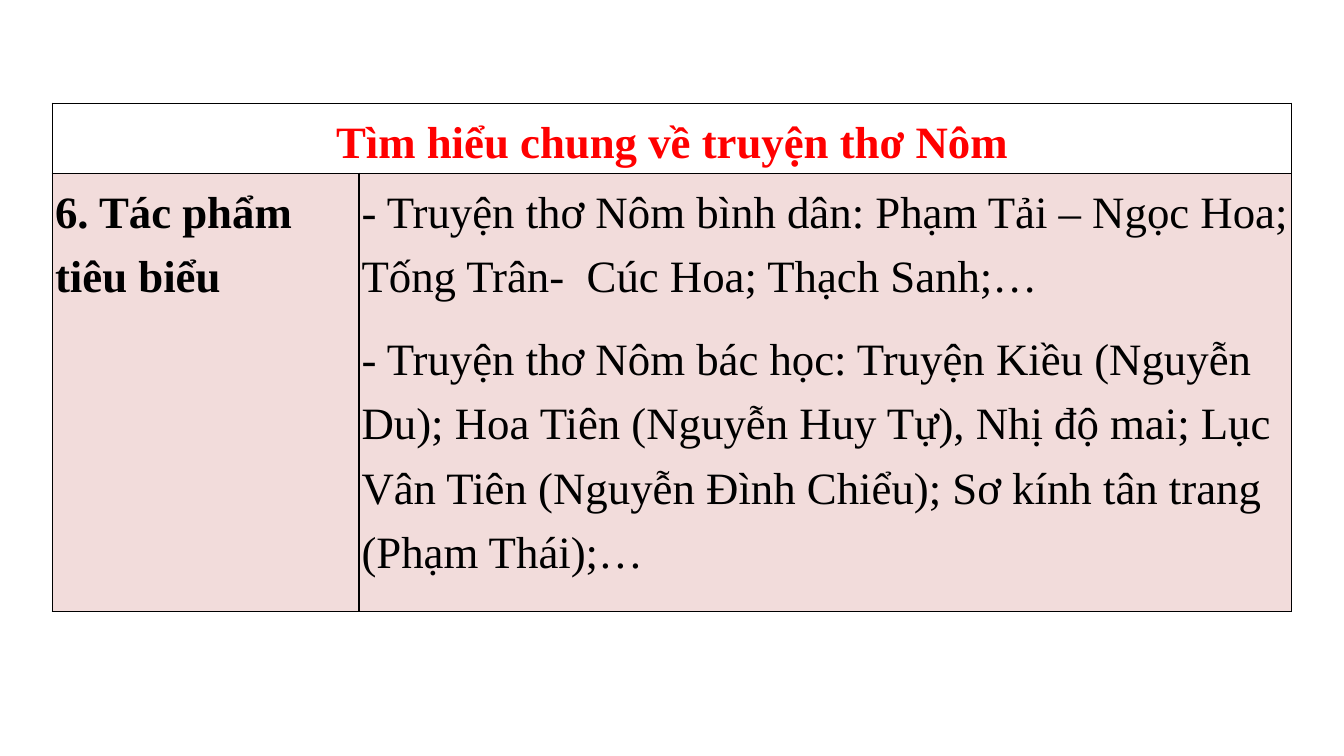
from lxml import etree
from pptx import Presentation
from pptx.dml.color import RGBColor
from pptx.enum.text import PP_ALIGN
from pptx.oxml.ns import qn
from pptx.util import Inches, Pt

LEFT = PP_ALIGN.LEFT
CENTER = PP_ALIGN.CENTER

BLACK = RGBColor(0x00, 0x00, 0x00)
RED = RGBColor(0xFF, 0x00, 0x00)
PINK = RGBColor(0xF2, 0xDC, 0xDB)

FONT = "Times New Roman"
SLIDE_WIDTH = 10
SLIDE_HEIGHT = SLIDE_WIDTH * 9 / 16
COLUMN_WIDTHS = (2.28, 6.94)
ROW_HEIGHTS = (0.52, 3.26)

TITLE = "Tìm hiểu chung về truyện thơ Nôm"
TOPIC = "6. Tác phẩm tiêu biểu"
WORKS = (
    "- Truyện thơ Nôm bình dân: Phạm Tải – Ngọc Hoa; "
    "Tống Trân-  Cúc Hoa; Thạch Sanh;…",
    "- Truyện thơ Nôm bác học: Truyện Kiều (Nguyễn Du); "
    "Hoa Tiên (Nguyễn Huy Tự), Nhị độ mai; Lục Vân Tiên (Nguyễn Đình Chiểu); "
    "Sơ kính tân trang (Phạm Thái);…",
)


def add_borders(cell):
    """Draw a thin black line on all four sides of the cell."""
    properties = cell._tc.get_or_add_tcPr()
    for index, side in enumerate(("a:lnL", "a:lnR", "a:lnT", "a:lnB")):
        line = etree.Element(qn(side), w=str(Pt(1)))
        fill = etree.SubElement(line, qn("a:solidFill"))
        etree.SubElement(fill, qn("a:srgbClr"), val=str(BLACK))
        properties.insert(index, line)


def style_cell(cell, fill_color=None):
    cell.margin_left = cell.margin_right = Inches(0.02)
    cell.margin_top = cell.margin_bottom = 0
    if fill_color is None:
        cell.fill.background()
    else:
        cell.fill.solid()
        cell.fill.fore_color.rgb = fill_color
    add_borders(cell)


def write_cell(cell, texts, color=BLACK, bold=False, alignment=LEFT):
    """Write one paragraph for each text."""
    frame = cell.text_frame
    for index, text in enumerate(texts):
        paragraph = frame.add_paragraph() if index else frame.paragraphs[0]
        paragraph.alignment = alignment
        paragraph.line_spacing = 1.3
        paragraph.space_after = Pt(10)
        run = paragraph.add_run()
        run.text = text
        run.font.name = FONT
        run.font.size = Pt(24)
        run.font.bold = bold
        run.font.color.rgb = color


def add_works_table(slide):
    table = slide.shapes.add_table(
        len(ROW_HEIGHTS), len(COLUMN_WIDTHS), Inches(0.39), Inches(0.77),
        Inches(sum(COLUMN_WIDTHS)), Inches(sum(ROW_HEIGHTS)),
    ).table
    table.first_row = False
    table.horz_banding = False
    for column, width in zip(table.columns, COLUMN_WIDTHS):
        column.width = Inches(width)
    for row, height, fill_color in zip(table.rows, ROW_HEIGHTS, (None, PINK)):
        row.height = Inches(height)
        for cell in row.cells:
            style_cell(cell, fill_color)

    title_cell = table.cell(0, 0)
    title_cell.merge(table.cell(0, 1))
    write_cell(title_cell, [TITLE], color=RED, bold=True, alignment=CENTER)
    write_cell(table.cell(1, 0), [TOPIC], bold=True)
    write_cell(table.cell(1, 1), WORKS)


def main():
    presentation = Presentation()
    presentation.slide_width = Inches(SLIDE_WIDTH)
    presentation.slide_height = Inches(SLIDE_HEIGHT)
    slide = presentation.slides.add_slide(presentation.slide_layouts[6])
    add_works_table(slide)
    presentation.save("out.pptx")


if __name__ == "__main__":
    main()
